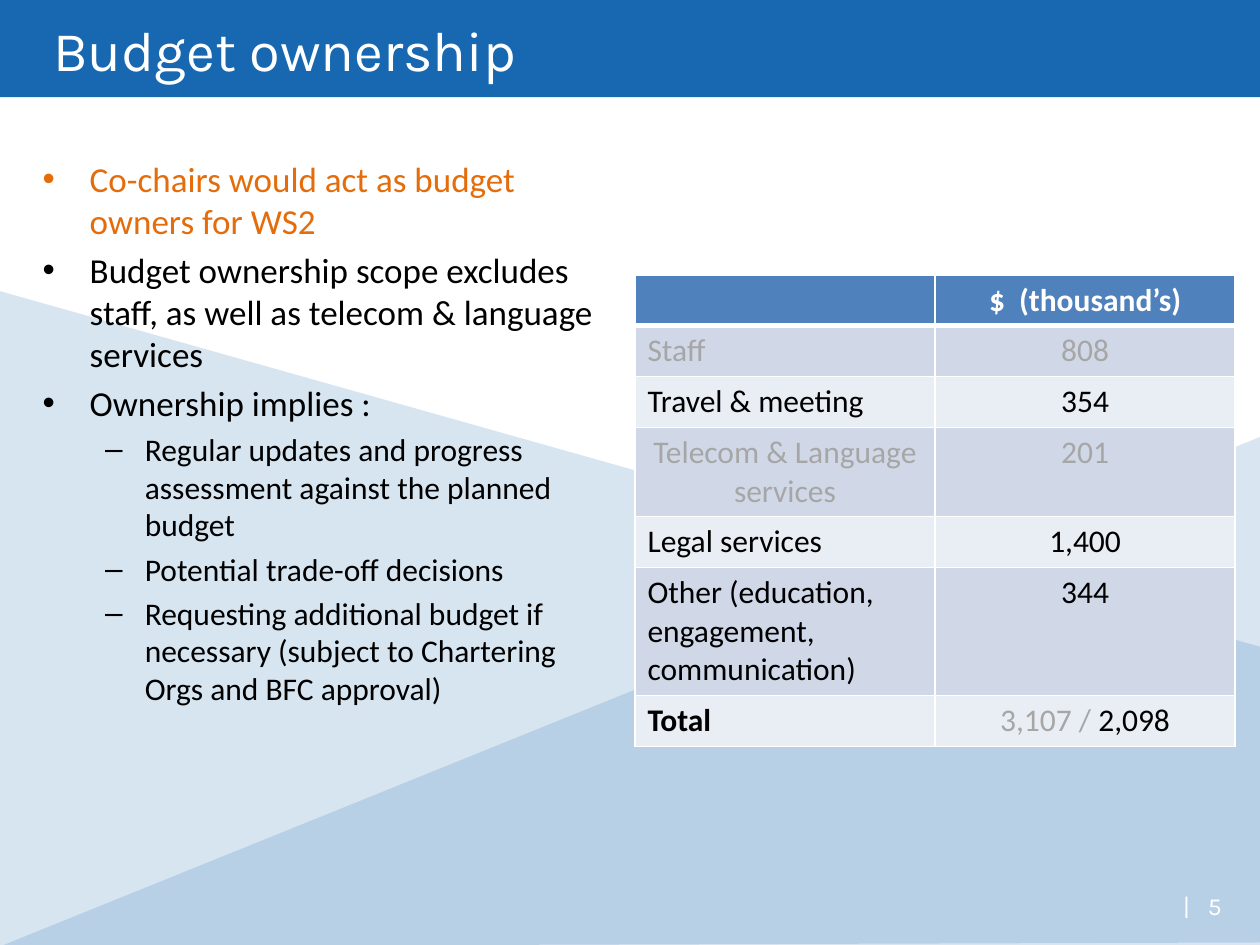
from lxml import etree
from pptx import Presentation
from pptx.dml.color import RGBColor
from pptx.enum.shapes import MSO_SHAPE
from pptx.enum.text import MSO_ANCHOR, PP_ALIGN
from pptx.oxml.ns import qn
from pptx.util import Cm, Pt

LEFT, CENTER = PP_ALIGN.LEFT, PP_ALIGN.CENTER
MIDDLE = MSO_ANCHOR.MIDDLE
RECTANGLE = MSO_SHAPE.RECTANGLE

BLUE, ORANGE, GREY = "1768B1", "E46C0A", "A6A6A6"
BLACK, WHITE = "000000", "FFFFFF"
HEADER_FILL, BAND_FILLS = "4F81BD", ("D0D8E8", "E9EDF4")

BACKGROUND = [
    ([(0, 5.87), (25.55, 13.08), (25.55, 19), (0, 19.08)], 17),
    ([(25.4, 8.81), (25.4, 19.08), (0, 19.08)], 16),
]
POINTS = [
    (0, "Co-chairs would act as budget owners for WS2", ORANGE),
    (0, "Budget ownership scope excludes staff, as well as telecom & language services", BLACK),
    (0, "Ownership implies :", BLACK),
    (1, "Regular updates and progress assessment against the planned budget", BLACK),
    (1, "Potential trade-off decisions", BLACK),
    (1, "Requesting additional budget if necessary (subject to Chartering Orgs and BFC approval)", BLACK),
]
LEVELS = [
    {"bullet": "•", "margin": 0.95, "hanging": 0.95, "size": 20, "space": 4},
    {"bullet": "–", "margin": 2.06, "hanging": 0.8, "size": 18, "space": 3.6},
]
BUDGET = [
    ("Staff", LEFT, [("808", GREY)], 1.03),
    ("Travel & meeting", LEFT, [("354", BLACK)], 1.03),
    ("Telecom & Language services", CENTER, [("201", GREY)], 1.79),
    ("Legal services", LEFT, [("1,400", BLACK)], 1.03),
    ("Other (education, engagement, communication)", LEFT, [("344", BLACK)], 2.58),
    ("Total", LEFT, [("3,107 / ", GREY), ("2,098", BLACK)], 1.03),
]
HEADER_HEIGHT = 1.01


def rgb(value):
    return RGBColor.from_string(value)


def write(paragraph, text, font="Calibri", size=18, color=BLACK, bold=False, align=LEFT):
    paragraph.alignment = align
    run = paragraph.add_run()
    run.text = text
    run.font.name = font
    run.font.size = Pt(size)
    run.font.bold = bold
    run.font.color.rgb = rgb(color)


def paint(shape, color, opacity=100):
    shape.shadow.inherit = False
    shape.fill.solid()
    shape.fill.fore_color.rgb = rgb(color)
    shape.line.fill.background()
    if opacity < 100:
        color_element = shape.fill._xPr.find(qn("a:solidFill"))[0]
        etree.SubElement(color_element, qn("a:alpha"), val=str(opacity * 1000))


def add_bullet(paragraph, bullet, margin, hanging):
    properties = paragraph._p.get_or_add_pPr()
    properties.set("marL", str(Cm(margin)))
    properties.set("indent", str(-Cm(hanging)))
    etree.SubElement(properties, qn("a:buFont"), typeface="Arial")
    etree.SubElement(properties, qn("a:buChar"), char=bullet)


def add_background(slide):
    for points, opacity in BACKGROUND:
        scaled = [(round(x * 100), round(y * 100)) for x, y in points]
        builder = slide.shapes.build_freeform(*scaled[0], scale=Cm(0.01))
        builder.add_line_segments(scaled[1:], close=True)
        paint(builder.convert_to_shape(), BLUE, opacity)


def add_title(slide):
    banner = slide.shapes.add_shape(RECTANGLE, 0, Cm(-0.02), Cm(25.4), Cm(1.98))
    paint(banner, BLUE)
    frame = banner.text_frame
    frame.vertical_anchor = MIDDLE
    frame.margin_left = Cm(1.07)
    paragraph = frame.paragraphs[0]
    paragraph.line_spacing = Pt(39.8)
    write(paragraph, "Budget ownership", font="Karla", size=32, color=WHITE)


def add_page_number(slide):
    frame = slide.shapes.add_textbox(Cm(23.6), Cm(17.83), Cm(1.3), Cm(1.02)).text_frame
    frame.word_wrap = True
    frame.margin_right = 0
    paragraph = frame.paragraphs[0]
    tabs = etree.SubElement(paragraph._p.get_or_add_pPr(), qn("a:tabLst"))
    etree.SubElement(tabs, qn("a:tab"), pos=str(Cm(0.5)), algn="l")
    write(paragraph, "|\t5", font="Karla", size=14, color=WHITE)


def add_points(slide):
    frame = slide.shapes.add_textbox(Cm(0.61), Cm(3.05), Cm(11.79), Cm(12.57)).text_frame
    frame.word_wrap = True
    for index, (level, text, color) in enumerate(POINTS):
        style = LEVELS[level]
        paragraph = frame.add_paragraph() if index else frame.paragraphs[0]
        add_bullet(paragraph, style["bullet"], style["margin"], style["hanging"])
        paragraph.level = level
        if index:
            paragraph.space_before = Pt(style["space"])
        write(paragraph, text, size=style["size"], color=color)


def format_cell(cell, fill, top=1, bottom=1):
    properties = cell._tc.get_or_add_tcPr()
    for side, width in (("L", 1), ("R", 1), ("T", top), ("B", bottom)):
        line = etree.SubElement(properties, qn(f"a:ln{side}"), w=str(Pt(width)))
        solid = etree.SubElement(line, qn("a:solidFill"))
        etree.SubElement(solid, qn("a:srgbClr"), val=WHITE)
    cell.fill.solid()
    cell.fill.fore_color.rgb = rgb(fill)


def add_budget_table(slide):
    heights = [HEADER_HEIGHT] + [row[-1] for row in BUDGET]
    table = slide.shapes.add_table(
        len(heights), 2, Cm(12.8), Cm(5.54), Cm(12.1), Cm(sum(heights))
    ).table
    for row, height in zip(table.rows, heights):
        row.height = Cm(height)
    for column in range(2):
        format_cell(table.cell(0, column), HEADER_FILL, bottom=3)
    heading = table.cell(0, 1).text_frame.paragraphs[0]
    write(heading, "$  (thousand’s)", color=WHITE, bold=True, align=CENTER)
    for index, (label, align, amounts, _) in enumerate(BUDGET, start=1):
        label_cell, amount_cell = table.cell(index, 0), table.cell(index, 1)
        for cell in (label_cell, amount_cell):
            format_cell(cell, BAND_FILLS[(index - 1) % 2], top=3 if index == 1 else 1)
        is_total = label == "Total"
        label_color = BLACK if is_total else amounts[0][1]
        write(label_cell.text_frame.paragraphs[0], label,
              color=label_color, bold=is_total, align=align)
        for text, color in amounts:
            write(amount_cell.text_frame.paragraphs[0], text, color=color, align=CENTER)


def main():
    presentation = Presentation()
    presentation.slide_width, presentation.slide_height = Cm(25.4), Cm(19.05)
    slide = presentation.slides.add_slide(presentation.slide_layouts[6])
    add_background(slide)
    add_page_number(slide)
    add_title(slide)
    add_budget_table(slide)
    add_points(slide)
    presentation.save("out.pptx")


if __name__ == "__main__":
    main()
